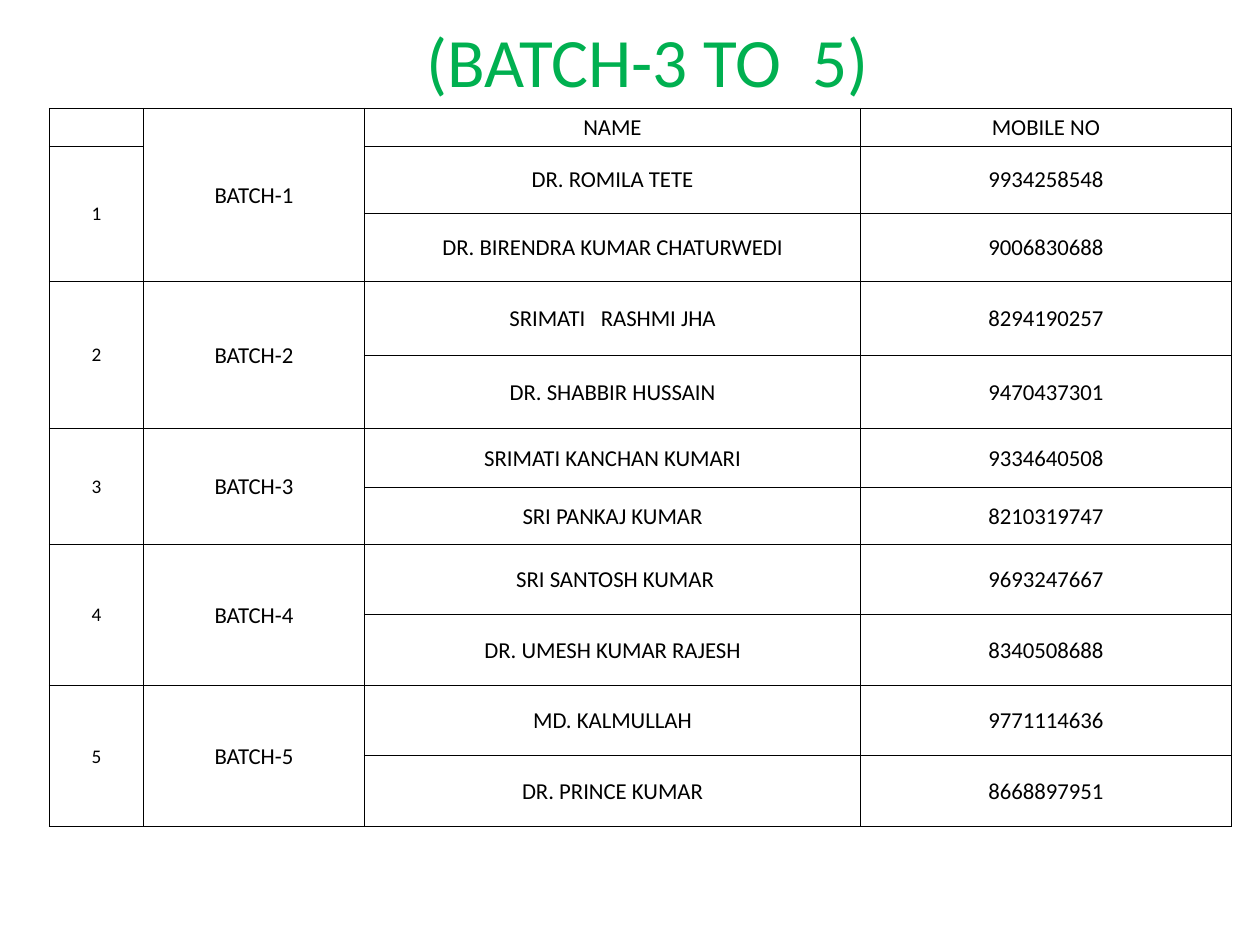
"""Build a slide that lists the members of each batch with their mobile numbers."""
from lxml.etree import SubElement
from pptx import Presentation
from pptx.dml.color import RGBColor
from pptx.enum.text import MSO_ANCHOR, PP_ALIGN
from pptx.oxml.ns import qn
from pptx.util import Inches, Pt

BATCHES = [
    [("DR. ROMILA TETE", "9934258548"), ("DR. BIRENDRA KUMAR CHATURWEDI", "9006830688")],
    [("SRIMATI   RASHMI JHA", "8294190257"), ("DR. SHABBIR HUSSAIN", "9470437301")],
    [("SRIMATI KANCHAN KUMARI", "9334640508"), ("SRI PANKAJ KUMAR", "8210319747")],
    [(" SRI SANTOSH KUMAR", "9693247667"), ("DR. UMESH KUMAR RAJESH", "8340508688")],
    [("MD. KALMULLAH", "9771114636"), ("DR. PRINCE KUMAR", "8668897951")],
]
COLUMN_WIDTHS = [0.75, 1.75, 3.94, 2.94]
ROW_HEIGHTS = [0.3, 0.53, 0.54, 0.59, 0.58, 0.47, 0.45] + [0.56] * 4


def color(value):
    return RGBColor.from_string(value)


class BatchSlide:
    font = "Calibri"
    green = "00B050"
    black = "000000"
    number_size = 11
    body_size = 13

    def __init__(self, presentation):
        self.slide = presentation.slides.add_slide(presentation.slide_layouts[6])

    def format_text(self, text_frame, size, hex_color):
        paragraph = text_frame.paragraphs[0]
        paragraph.alignment = PP_ALIGN.CENTER
        for run in paragraph.runs:
            run.font.name = self.font
            run.font.size = Pt(size)
            run.font.color.rgb = color(hex_color)

    def title(self, text, left, top, width, height):
        shape = self.slide.shapes.add_textbox(
            Inches(left), Inches(top), Inches(width), Inches(height))
        text_frame = shape.text_frame
        text_frame.word_wrap = True
        text_frame.vertical_anchor = MSO_ANCHOR.MIDDLE
        text_frame.text = text
        self.format_text(text_frame, 39.6, self.green)

    def border(self, cell):
        properties = cell._tc.get_or_add_tcPr()
        for position, side in enumerate(("a:lnL", "a:lnR", "a:lnT", "a:lnB")):
            line = properties.makeelement(qn(side), {"w": str(Pt(0.5))})
            fill = SubElement(line, qn("a:solidFill"))
            SubElement(fill, qn("a:srgbClr"), val=self.black)
            properties.insert(position, line)

    def cell_text(self, cell, text, size):
        cell.text_frame.text = text
        self.format_text(cell.text_frame, size, self.black)

    def table(self, left, top, widths, heights):
        frame = self.slide.shapes.add_table(
            len(heights), len(widths), Inches(left), Inches(top),
            Inches(sum(widths)), Inches(sum(heights)))
        table = frame.table
        table.first_row = table.horz_banding = False
        for column, width in zip(table.columns, widths):
            column.width = Inches(width)
        for row, height in zip(table.rows, heights):
            row.height = Inches(height)
        for cell in table.iter_cells():
            cell.fill.background()
            cell.vertical_anchor = MSO_ANCHOR.MIDDLE
            cell.margin_left = cell.margin_right = cell.margin_top = Inches(0.01)
            cell.margin_bottom = 0
            end = cell.text_frame.paragraphs[0]._p.get_or_add_endParaRPr()
            end.set("sz", str(self.number_size * 100))
            self.border(cell)
        return table

    def batch_table(self, left, top):
        table = self.table(left, top, COLUMN_WIDTHS, ROW_HEIGHTS)
        self.cell_text(table.cell(0, 2), "NAME", self.body_size)
        self.cell_text(table.cell(0, 3), "MOBILE NO", self.body_size)
        for number, members in enumerate(BATCHES, 1):
            first = 2 * number - 1
            last = first + len(members) - 1
            label_row = 0 if number == 1 else first
            table.cell(first, 0).merge(table.cell(last, 0))
            table.cell(label_row, 1).merge(table.cell(last, 1))
            self.cell_text(table.cell(first, 0), str(number), self.number_size)
            self.cell_text(table.cell(label_row, 1), f"BATCH-{number}", self.body_size)
            for row, (name, mobile) in enumerate(members, first):
                self.cell_text(table.cell(row, 2), name, self.body_size)
                self.cell_text(table.cell(row, 3), mobile, self.body_size)


def main():
    presentation = Presentation()
    presentation.slide_width = Inches(10)
    presentation.slide_height = Inches(7.5)
    batch_slide = BatchSlide(presentation)
    batch_slide.title(" (BATCH-3 TO  5)", 0.83, 0.16, 8.5, 0.63)
    batch_slide.batch_table(0.39, 0.86)
    presentation.save("out.pptx")


if __name__ == "__main__":
    main()
